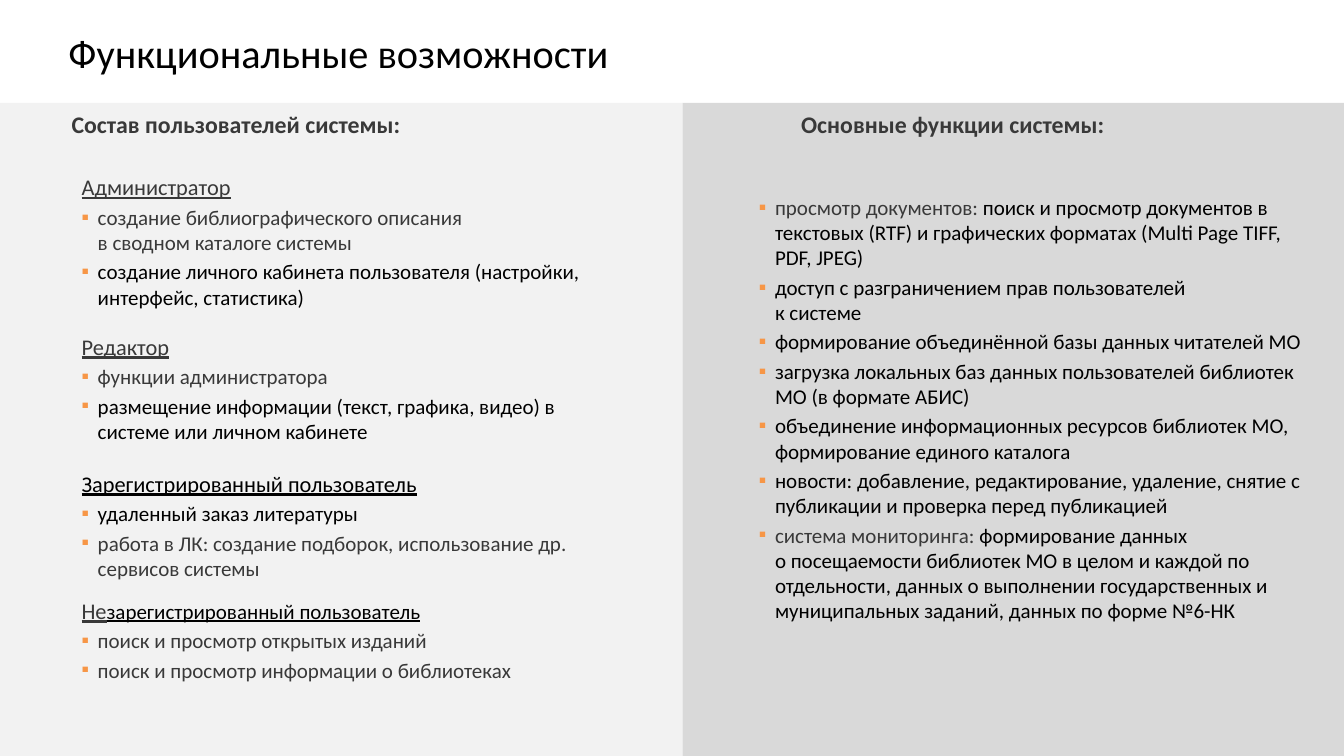
"""Builds the slide on system users and main functions."""
from copy import deepcopy

from lxml import etree
from pptx import Presentation
from pptx.dml.color import RGBColor
from pptx.enum.shapes import MSO_SHAPE
from pptx.enum.text import MSO_ANCHOR
from pptx.oxml.ns import qn
from pptx.util import Pt

RECTANGLE = MSO_SHAPE.RECTANGLE
MIDDLE = MSO_ANCHOR.MIDDLE

THEME = {
    "font": "Calibri",
    "black": "000000", "grey": "393939", "bullet": "F79646",
    "left panel": "F2F2F2", "right panel": "D9D9D9",
    "title size": 28.8, "heading size": 17, "role size": 16, "item size": 15,
}

TITLE = "Функциональные возможности"
HEADINGS = [
    (41.8, "Состав пользователей системы:"),
    (563, "Основные функции системы:"),
]
ROLES = [
    (118.8, 400, [("Администратор", "grey", "role size")], [
        [("создание библиографического описания \nв сводном каталоге системы", "grey")],
        [("создание личного кабинета пользователя (настройки, интерфейс, статистика)", "black")],
    ]),
    (232.6, 378, [("Редактор", "grey", "role size")], [
        [("функции администратора", "grey")],
        [("размещение информации (текст, графика, видео) в системе или личном кабинете", "black")],
    ]),
    (330.5, 378, [("Зарегистрированный пользователь", "black", "role size")], [
        [("удаленный заказ литературы", "black")],
        [("работа в ЛК: создание подборок, использование др. сервисов системы", "grey")],
    ]),
    (421.2, 427, [("Не", "grey", "role size"),
                  ("зарегистрированный пользователь", "black", "item size")], [
        [("поиск и просмотр открытых изданий", "grey")],
        [("поиск и просмотр информации о библиотеках", "grey")],
    ]),
]
FUNCTIONS = [
    [("просмотр документов:", "grey"),
     (" поиск и просмотр документов в текстовых (RTF) и графических форматах "
      "(Multi Page TIFF, PDF, JPEG)", "black")],
    [("доступ с разграничением прав пользователей \nк системе", "black")],
    [("формирование объединённой базы данных читателей МО", "black")],
    [("загрузка локальных баз данных пользователей библиотек МО (в формате АБИС)", "black")],
    [("объединение информационных ресурсов библиотек МО, формирование единого каталога", "black")],
    [("новости: добавление, редактирование, удаление, снятие с публикации "
      "и проверка перед публикацией", "black")],
    [("система мониторинга:", "grey"),
     (" формирование данных \nо посещаемости библиотек МО в целом и каждой по отдельности, "
      "данных о выполнении государственных и муниципальных заданий, "
      "данных по форме №6-НК", "black")],
]

WIDTH, HEIGHT = 960, 540
PANEL_TOP, PANEL_SPLIT = 73.5, 487.6
LINE_BOX = 37.4
ROLE_LEFT = 49
INSET_X, INSET_Y = 9.3, 5
INDENT = 11.5
SPACE_BEFORE = 3


def color(name):
    return RGBColor.from_string(THEME[name])


def add_panel(page, left, width, fill):
    panel = page.shapes.add_shape(
        RECTANGLE, Pt(left), Pt(PANEL_TOP), Pt(width), Pt(HEIGHT - PANEL_TOP))
    panel.shadow.inherit = False
    panel.fill.solid()
    panel.fill.fore_color.rgb = color(fill)
    panel.line.fill.background()


def add_box(page, left, top, width, height, inset_x=INSET_X, inset_y=INSET_Y):
    box = page.shapes.add_textbox(Pt(left), Pt(top), Pt(width), Pt(height))
    frame = box.text_frame
    frame.word_wrap = True
    frame.margin_left = frame.margin_right = Pt(inset_x)
    frame.margin_top = frame.margin_bottom = Pt(inset_y)
    return frame


def add_span(para, text, shade, size, bold=False, underline=False):
    for number, line in enumerate(text.split("\n")):
        if number:
            para.add_line_break()
        span = para.add_run()
        span.text = line
        font = span.font
        font.name = THEME["font"]
        font.size = Pt(THEME[size])
        font.color.rgb = color(shade)
        font.bold = bold
        font.underline = underline
        if number:
            span._r.getprevious().append(deepcopy(span._r.rPr))


def add_bullet(para):
    properties = para._p.get_or_add_pPr()
    properties.set("marL", str(Pt(INDENT)))
    properties.set("indent", str(-Pt(INDENT)))
    bullet_color = etree.SubElement(properties, qn("a:buClr"))
    etree.SubElement(bullet_color, qn("a:srgbClr"), val=THEME["bullet"])
    etree.SubElement(properties, qn("a:buFont"), typeface=THEME["font"])
    etree.SubElement(properties, qn("a:buChar"), char="▪")


def add_items(frame, items, first=None):
    for item in items:
        para = first or frame.add_paragraph()
        first = None
        para.space_before = Pt(SPACE_BEFORE)
        add_bullet(para)
        for text, shade in item:
            add_span(para, text, shade, "item size")


def add_role(page, top, width, name, items):
    frame = add_box(page, ROLE_LEFT, top, width, LINE_BOX)
    para = frame.paragraphs[0]
    para.space_before = Pt(SPACE_BEFORE)
    for text, shade, size in name:
        add_span(para, text, shade, size, underline=True)
    add_items(frame, items)


def main():
    deck = Presentation()
    deck.slide_width, deck.slide_height = Pt(WIDTH), Pt(HEIGHT)
    page = deck.slides.add_slide(deck.slide_layouts[6])

    title = add_box(page, 41.8, 20.9, 918, LINE_BOX, 7.2, 3.6)
    title.vertical_anchor = MIDDLE
    title.paragraphs[0].line_spacing = 0.9
    add_span(title.paragraphs[0], TITLE, "black", "title size")

    add_panel(page, 0, PANEL_SPLIT, "left panel")
    add_panel(page, PANEL_SPLIT, WIDTH - PANEL_SPLIT, "right panel")

    for left, text in HEADINGS:
        para = add_box(page, left, PANEL_TOP, 363, LINE_BOX).paragraphs[0]
        para.space_before = Pt(SPACE_BEFORE)
        add_span(para, text, "grey", "heading size", bold=True)

    for role in ROLES:
        add_role(page, *role)

    functions = add_box(page, 532.8, 133.9, 408.2, 370)
    add_items(functions, FUNCTIONS, functions.paragraphs[0])

    deck.save("out.pptx")


if __name__ == "__main__":
    main()
